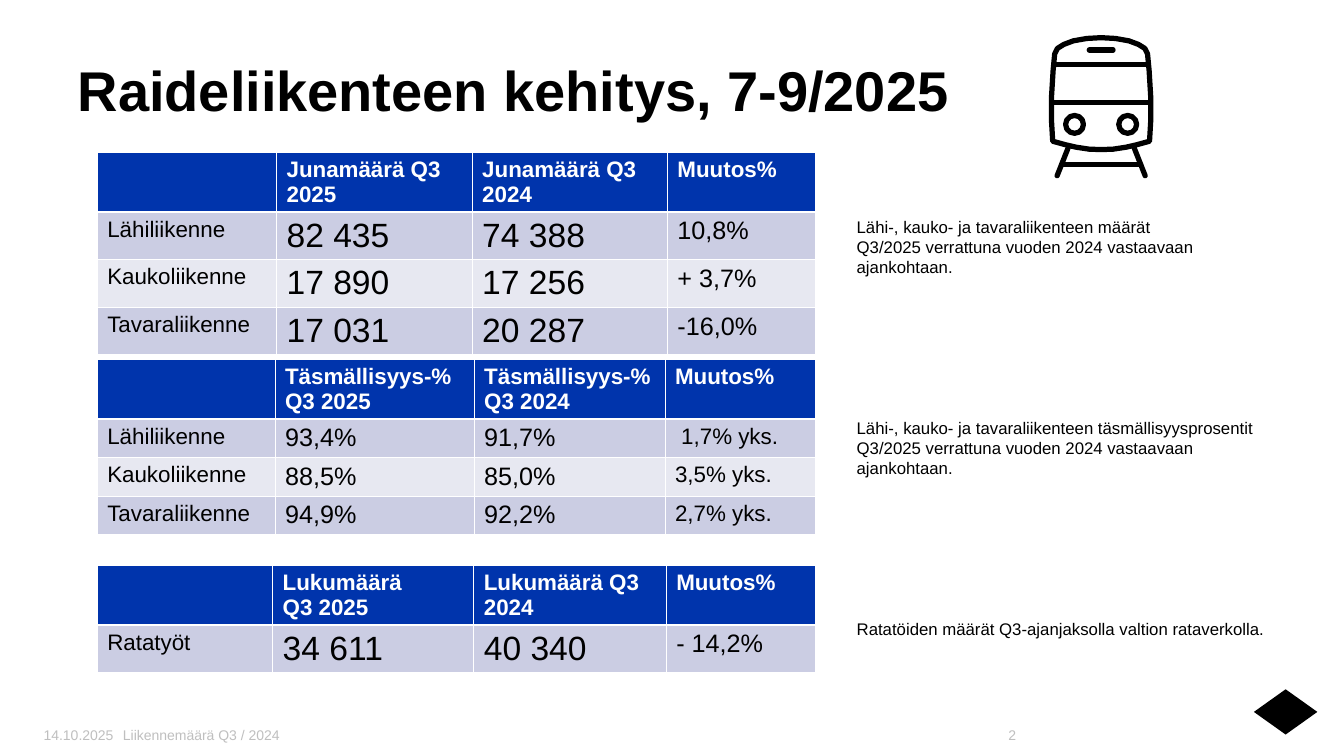
from lxml.etree import SubElement
from pptx import Presentation
from pptx.dml.color import RGBColor
from pptx.enum.shapes import MSO_CONNECTOR, MSO_SHAPE
from pptx.enum.text import MSO_ANCHOR, PP_ALIGN
from pptx.oxml.ns import qn
from pptx.util import Cm, Pt

BLUE, LAVENDER, PALE = "0034AC", "CBCDE3", "E7E8F1"
BLACK, WHITE, GREY = "000000", "FFFFFF", "BFBFBF"


def color(value):
    return RGBColor.from_string(value)


def add_text(box, text, size, font_color=BLACK, bold=False, insets=(0.25, 0.13, 0.25, 0.13)):
    shape = slide.shapes.add_textbox(*[Cm(length) for length in box])
    frame = shape.text_frame
    frame.word_wrap = True
    frame.margin_left, frame.margin_top, frame.margin_right, frame.margin_bottom = map(Cm, insets)
    frame.text = text
    for paragraph in frame.paragraphs:
        font = paragraph.runs[0].font
        font.name, font.size, font.bold = "Arial", Pt(size), bold
        font.color.rgb = color(font_color)
    return frame


presentation = Presentation()
presentation.slide_width, presentation.slide_height = Cm(33.87), Cm(19.05)
slide = presentation.slides.add_slide(presentation.slide_layouts[6])

# Plain mark in the corner
mark = slide.shapes.add_shape(MSO_SHAPE.DIAMOND, Cm(31.6), Cm(17.37), Cm(1.6), Cm(1.14))
mark.shadow.inherit = False
mark.fill.solid()
mark.fill.fore_color.rgb = color(BLACK)
mark.line.fill.background()

# Title
add_text((1.96, 1.4, 29.2, 3.1), "Raideliikenteen kehitys, 7-9/2025", 40, bold=True,
         insets=(0, 0, 0.25, 0.13))

# Tables: top, body row height, column widths, body text sizes, rows
tables = [
    (3.84, 1.2, (4.52, 4.93, 4.92, 3.74), (16, 24, 24, 18), [
        ("", "Junamäärä Q3 2025", "Junamäärä Q3 2024", "Muutos%"),
        ("Lähiliikenne", "82 435", "74 388", "10,8%"),
        ("Kaukoliikenne", "17 890", "17 256", "+ 3,7%"),
        ("Tavaraliikenne", "17 031", "20 287", "-16,0%")]),
    (9.06, 0.97, (4.48, 5.02, 4.81, 3.8), (16, 18, 18, 16), [
        ("", "Täsmällisyys-% Q3 2025", "Täsmällisyys-% Q3 2024", "Muutos%"),
        ("Lähiliikenne", "93,4%", "91,7%", " 1,7% yks."),
        ("Kaukoliikenne", "88,5%", "85,0%", "3,5% yks."),
        ("Tavaraliikenne", "94,9%", "92,2%", "2,7% yks.")]),
    (14.25, 1.2, (4.42, 5.07, 4.85, 3.77), (16, 24, 24, 18), [
        ("", "Lukumäärä\nQ3 2025", "Lukumäärä Q3 2024", "Muutos%"),
        ("Ratatyöt", "34 611", "40 340", "- 14,2%")]),
]
for top, body_height, widths, sizes, rows in tables:
    heights = [1.5] + [body_height] * (len(rows) - 1)
    table = slide.shapes.add_table(len(rows), 4, Cm(2.45), Cm(top),
                                   Cm(sum(widths)), Cm(sum(heights))).table
    for column, width in zip(table.columns, widths):
        column.width = Cm(width)
    for row_index, row in enumerate(rows):
        table.rows[row_index].height = Cm(heights[row_index])
        header = row_index == 0
        for column_index, text in enumerate(row):
            cell = table.cell(row_index, column_index)
            # A slim bottom margin keeps rows at their set height
            cell.margin_bottom = Cm(0.01)
            # White borders, heavier below the header
            properties = cell._tc.get_or_add_tcPr()
            for side in ("lnL", "lnR", "lnT", "lnB"):
                heavy = (row_index, side) in ((0, "lnB"), (1, "lnT"))
                border = SubElement(properties, qn(f"a:{side}"), w=str(Pt(1.5 if heavy else 0.6)))
                fill = SubElement(border, qn("a:solidFill"))
                SubElement(fill, qn("a:srgbClr"), val=WHITE)
            cell.fill.solid()
            cell.fill.fore_color.rgb = color(BLUE if header else LAVENDER if row_index % 2 else PALE)
            cell.text_frame.text = text
            for paragraph in cell.text_frame.paragraphs:
                for run in paragraph.runs:
                    run.font.name, run.font.bold = "Arial", header
                    run.font.size = Pt(16 if header else sizes[column_index])
                    run.font.color.rgb = color(WHITE if header else BLACK)

# Footer
footer_insets = (0, 0.13, 0.25, 0.13)
footers = [
    ((1.1, 18.18, 2.29, 0.66), "14.10.2025", PP_ALIGN.LEFT, footer_insets),
    ((2.85, 18.18, 20.27, 0.66), "Liikennemäärä Q3 / 2024", PP_ALIGN.LEFT, (0.25, 0.13, 0, 0.13)),
    ((23.22, 18.18, 2.64, 0.66), "2", PP_ALIGN.RIGHT, footer_insets),
]
for box, text, alignment, insets in footers:
    frame = add_text(box, text, 10, GREY, insets=insets)
    frame.vertical_anchor = MSO_ANCHOR.MIDDLE
    frame.paragraphs[0].alignment = alignment

# Notes beside the tables, spaced to line up with each one
notes = add_text((21.34, 5.33, 11.3, 11.02), "\n".join([
    "Lähi-, kauko- ja tavaraliikenteen määrät",
    "Q3/2025 verrattuna vuoden 2024 vastaavaan ajankohtaan.",
    "Lähi-, kauko- ja tavaraliikenteen täsmällisyysprosentit Q3/2025 verrattuna "
    "vuoden 2024 vastaavaan ajankohtaan.",
    "Ratatöiden määrät Q3-ajanjaksolla valtion rataverkolla."]), 12)
for paragraph, gap in zip(notes.paragraphs, (0, 0, 100.5, 100.5)):
    paragraph.space_before = Pt(gap)

# Train: body outline mirrored about its centre line
center = 27.75
stroke = Pt(3.75)
right_half = [(0, 0.95), (0.36, 0.97), (0.7, 1.03), (0.94, 1.12), (1.1, 1.22), (1.17, 1.36),
              (1.21, 1.78), (1.25, 2.44), (1.25, 3.05), (1.22, 3.56), (0.89, 3.65),
              (0.63, 3.71), (0.3, 3.76), (0, 3.77)]
left_half = [(-x, y) for x, y in reversed(right_half[1:-1])]
points = [(Cm(center + x), Cm(y)) for x, y in right_half + left_half]
builder = slide.shapes.build_freeform(*points[0])
builder.add_line_segments(points[1:], close=True)
outlines = [builder.convert_to_shape()]

# Train: headlights
for x in (-0.67, 0.67):
    outlines.append(slide.shapes.add_shape(MSO_SHAPE.OVAL, Cm(center + x - 0.225), Cm(2.91),
                                           Cm(0.45), Cm(0.45)))
for shape in outlines:
    shape.shadow.inherit = False
    shape.fill.background()
    shape.line.color.rgb = color(BLACK)
    shape.line.width = stroke

# Train: window lines, sleeper, destination sign and rails
strokes = [
    (-1.19, 1.63, 1.19, 1.63, "flat"),
    (-1.25, 2.58, 1.25, 2.58, "flat"),
    (-1, 4.15, 1, 4.15, "flat"),
    (-0.3, 1.26, 0.3, 1.26, "rnd"),
    (-0.83, 3.72, -1.11, 4.43, "rnd"),
    (0.83, 3.72, 1.11, 4.43, "rnd"),
]
for x1, y1, x2, y2, cap in strokes:
    connector = slide.shapes.add_connector(MSO_CONNECTOR.STRAIGHT, Cm(center + x1), Cm(y1),
                                           Cm(center + x2), Cm(y2))
    connector.line.color.rgb = color(BLACK)
    connector.line.width = stroke
    shape_properties = connector._element.spPr
    shape_properties.find(qn("a:ln")).set("cap", cap)
    SubElement(shape_properties, qn("a:effectLst"))

presentation.save("out.pptx")
